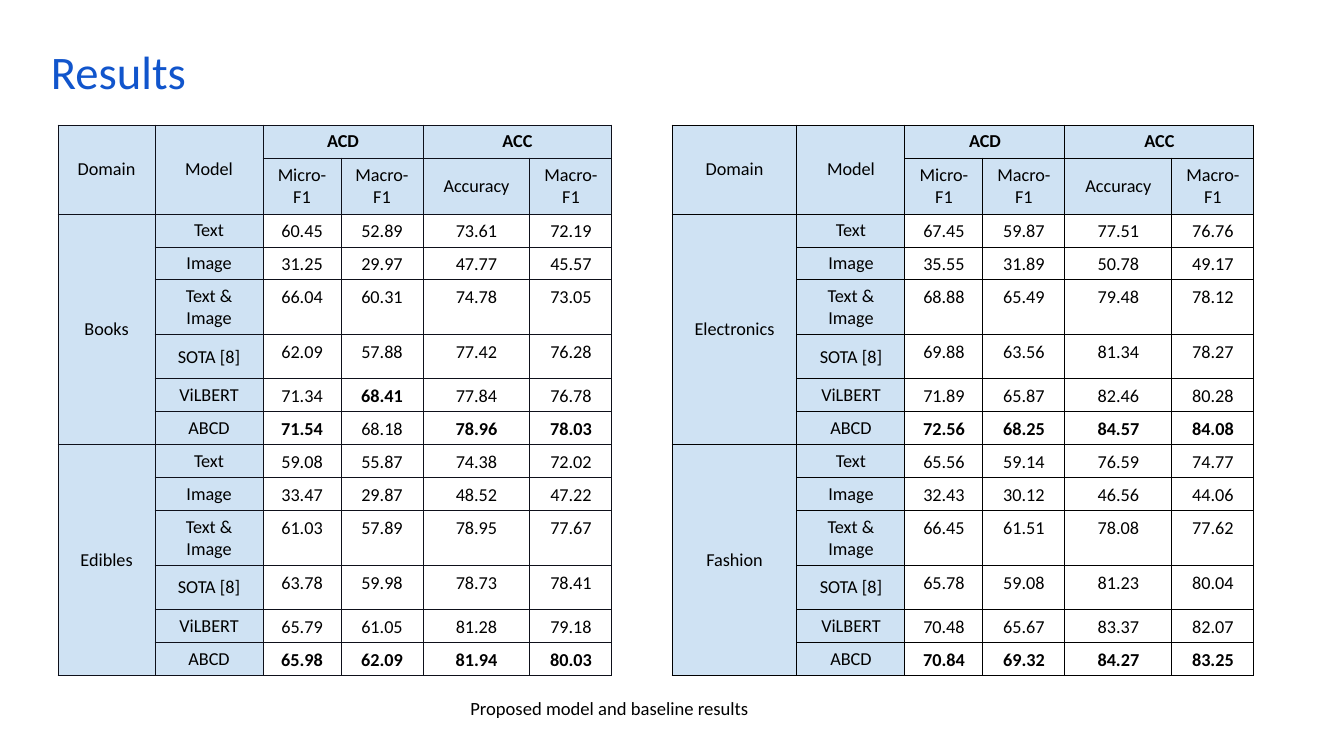
from dataclasses import dataclass

from lxml import etree
from pptx import Presentation
from pptx.dml.color import RGBColor
from pptx.enum.text import MSO_ANCHOR, PP_ALIGN
from pptx.oxml.ns import qn
from pptx.slide import Slide
from pptx.table import _Cell as Cell
from pptx.text.text import TextFrame
from pptx.util import Emu, Pt

CENTER, LEFT = PP_ALIGN.CENTER, PP_ALIGN.LEFT
MIDDLE, TOP = MSO_ANCHOR.MIDDLE, MSO_ANCHOR.TOP
EMU_PER_PX = 914400 / 100.8


@dataclass(frozen=True)
class Theme:
    font: str = "Calibri"
    title_color: str = "1155CC"
    text_color: str = "000000"
    header_fill: str = "CFE2F3"
    title_size: float = 33.3
    caption_size: float = 13.3
    table_size: float = 13
    border_width: float = 0.75


@dataclass(frozen=True)
class TextStyle:
    size: float
    color: str
    align: PP_ALIGN = CENTER
    anchor: MSO_ANCHOR = MIDDLE
    line_spacing: float = 1.0


@dataclass(frozen=True)
class TextBox:
    text: str
    box: tuple[int, int, int, int]
    margins: tuple[int, int]
    style: TextStyle


@dataclass(frozen=True)
class Domain:
    name: str
    scores: tuple[tuple[float, ...], ...]


@dataclass(frozen=True)
class ResultTable:
    left: int
    domain_width: int
    border_color: str
    domains: tuple[Domain, ...]


THEME = Theme()
LABEL_STYLE = TextStyle(THEME.table_size, THEME.text_color)
SCORE_STYLE = TextStyle(THEME.table_size, THEME.text_color, anchor=TOP, line_spacing=1.15)
TITLE_STYLE = TextStyle(THEME.title_size, THEME.title_color, align=LEFT, line_spacing=0.9)
CAPTION_STYLE = TextStyle(THEME.caption_size, THEME.text_color, anchor=TOP)

TABLE_TOP = 125
MODEL_WIDTH = 108
METRIC_WIDTHS = (78, 82, 107, 82)
HEADER_HEIGHTS = (33, 56)
MODEL_HEIGHTS = {"Text": 33, "Image": 33, "Text & Image": 55,
                 "SOTA [8]": 44, "ViLBERT": 33, "ABCD": 33}
METRICS = ("Micro-F1", "Macro-F1", "Accuracy", "Macro-F1")
LABEL_MARGINS, SCORE_MARGINS = (13, 5), (4, 3)

TABLES = (
    ResultTable(58, 97, "0E101A", (
        Domain("Books", (
            (60.45, 52.89, 73.61, 72.19),
            (31.25, 29.97, 47.77, 45.57),
            (66.04, 60.31, 74.78, 73.05),
            (62.09, 57.88, 77.42, 76.28),
            (71.34, 68.41, 77.84, 76.78),
            (71.54, 68.18, 78.96, 78.03))),
        Domain("Edibles", (
            (59.08, 55.87, 74.38, 72.02),
            (33.47, 29.87, 48.52, 47.22),
            (61.03, 57.89, 78.95, 77.67),
            (63.78, 59.98, 78.73, 78.41),
            (65.79, 61.05, 81.28, 79.18),
            (65.98, 62.09, 81.94, 80.03))))),
    ResultTable(672, 125, "000000", (
        Domain("Electronics", (
            (67.45, 59.87, 77.51, 76.76),
            (35.55, 31.89, 50.78, 49.17),
            (68.88, 65.49, 79.48, 78.12),
            (69.88, 63.56, 81.34, 78.27),
            (71.89, 65.87, 82.46, 80.28),
            (72.56, 68.25, 84.57, 84.08))),
        Domain("Fashion", (
            (65.56, 59.14, 76.59, 74.77),
            (32.43, 30.12, 46.56, 44.06),
            (66.45, 61.51, 78.08, 77.62),
            (65.78, 59.08, 81.23, 80.04),
            (70.48, 65.67, 83.37, 82.07),
            (70.84, 69.32, 84.27, 83.25))))),
)

TEXT_BOXES = (
    TextBox("Results", (41, 44, 1252, 61), (10, 5), TITLE_STYLE),
    TextBox("Proposed model and baseline results", (383, 686, 453, 41), (13, 13), CAPTION_STYLE),
)


def px(length: int) -> Emu:
    return Emu(round(length * EMU_PER_PX))


def set_margins(target: Cell | TextFrame, margins: tuple[int, int]) -> None:
    target.margin_left = target.margin_right = px(margins[0])
    target.margin_top = target.margin_bottom = px(margins[1])


def write_text(frame: TextFrame, text: str, style: TextStyle, bold: bool = False) -> None:
    paragraph = frame.paragraphs[0]
    paragraph.alignment = style.align
    paragraph.line_spacing = style.line_spacing
    run = paragraph.add_run()
    run.text = text
    run.font.name = THEME.font
    run.font.size = Pt(style.size)
    run.font.bold = bold
    run.font.color.rgb = RGBColor.from_string(style.color)


def add_borders(cell: Cell, color: str) -> None:
    properties = cell._tc.get_or_add_tcPr()
    for side in ("a:lnL", "a:lnR", "a:lnT", "a:lnB"):
        line = etree.SubElement(properties, qn(side), w=str(Pt(THEME.border_width)))
        fill = etree.SubElement(line, qn("a:solidFill"))
        etree.SubElement(fill, qn("a:srgbClr"), val=color)


def write_label(cell: Cell, text: str, bold: bool = False) -> None:
    cell.vertical_anchor = LABEL_STYLE.anchor
    set_margins(cell, LABEL_MARGINS)
    write_text(cell.text_frame, text, LABEL_STYLE, bold)


def write_score(cell: Cell, score: float, best: bool) -> None:
    cell.vertical_anchor = SCORE_STYLE.anchor
    set_margins(cell, SCORE_MARGINS)
    write_text(cell.text_frame, f"{score:.2f}", SCORE_STYLE, best)


def add_result_table(slide: Slide, result: ResultTable) -> None:
    """Draw one table; the best score of each metric in a domain is bold."""
    widths = (result.domain_width, MODEL_WIDTH, *METRIC_WIDTHS)
    heights = (*HEADER_HEIGHTS, *(tuple(MODEL_HEIGHTS.values()) * len(result.domains)))
    table = slide.shapes.add_table(len(heights), len(widths), px(result.left), px(TABLE_TOP),
                                   px(sum(widths)), px(sum(heights))).table
    table.first_row = table.horz_banding = False
    for column, width in zip(table.columns, widths):
        column.width = px(width)
    for row, height in zip(table.rows, heights):
        row.height = px(height)

    header_rows = len(HEADER_HEIGHTS)
    for row_index in range(len(heights)):
        for column_index in range(len(widths)):
            cell = table.cell(row_index, column_index)
            add_borders(cell, result.border_color)
            if row_index < header_rows or column_index < 2:
                cell.fill.solid()
                cell.fill.fore_color.rgb = RGBColor.from_string(THEME.header_fill)
            else:
                cell.fill.background()

    for column_index, name in enumerate(("Domain", "Model")):
        table.cell(0, column_index).merge(table.cell(1, column_index))
        write_label(table.cell(0, column_index), name)
    for column_index, task in ((2, "ACD"), (4, "ACC")):
        table.cell(0, column_index).merge(table.cell(0, column_index + 1))
        write_label(table.cell(0, column_index), task, bold=True)
    for column_index, metric in enumerate(METRICS, start=2):
        write_label(table.cell(1, column_index), metric)

    for domain_index, domain in enumerate(result.domains):
        first_row = header_rows + domain_index * len(MODEL_HEIGHTS)
        table.cell(first_row, 0).merge(table.cell(first_row + len(MODEL_HEIGHTS) - 1, 0))
        write_label(table.cell(first_row, 0), domain.name)
        best_scores = [max(column) for column in zip(*domain.scores)]
        for row_index, (model, scores) in enumerate(zip(MODEL_HEIGHTS, domain.scores), first_row):
            write_label(table.cell(row_index, 1), model)
            for column_index, (score, best) in enumerate(zip(scores, best_scores), start=2):
                write_score(table.cell(row_index, column_index), score, score == best)


def add_text_box(slide: Slide, item: TextBox) -> None:
    frame = slide.shapes.add_textbox(*map(px, item.box)).text_frame
    frame.word_wrap = True
    frame.vertical_anchor = item.style.anchor
    set_margins(frame, item.margins)
    write_text(frame, item.text, item.style)


def main() -> None:
    presentation = Presentation()
    presentation.slide_width, presentation.slide_height = px(1344), px(756)
    slide = presentation.slides.add_slide(presentation.slide_layouts[6])
    for result in TABLES:
        add_result_table(slide, result)
    for item in TEXT_BOXES:
        add_text_box(slide, item)
    presentation.save("out.pptx")


if __name__ == "__main__":
    main()
